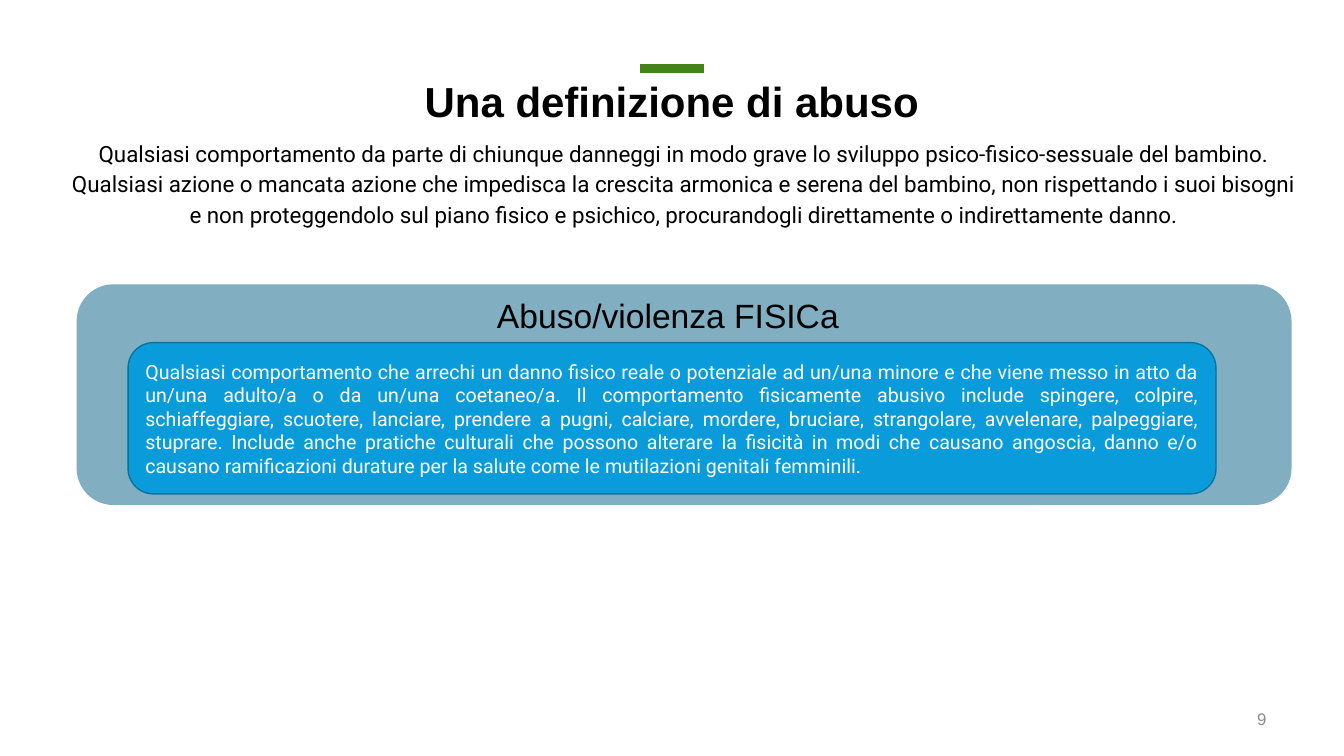
from dataclasses import dataclass, field
from typing import Optional

from lxml.etree import SubElement
from pptx import Presentation
from pptx.dml.color import RGBColor
from pptx.enum.shapes import MSO_CONNECTOR, MSO_SHAPE
from pptx.enum.text import MSO_ANCHOR, MSO_AUTO_SIZE, PP_ALIGN
from pptx.oxml.ns import qn
from pptx.util import Inches, Pt

BLACK = RGBColor(0x00, 0x00, 0x00)
WHITE = RGBColor(0xFF, 0xFF, 0xFF)
GREY = RGBColor(0x8C, 0x8C, 0x8C)
GREEN = RGBColor(0x44, 0x83, 0x19)
TEAL = RGBColor(0x05, 0x5E, 0x83)
BLUE = RGBColor(0x0A, 0x9C, 0xDA)
DARK_BLUE = RGBColor(0x07, 0x73, 0xA1)

Box = tuple[float, float, float, float]


@dataclass
class Label:
    text: str
    box: Box
    size: float
    color: RGBColor = BLACK
    font: str = "Arial"
    bold: bool = False
    align: PP_ALIGN = PP_ALIGN.CENTER
    frame: dict = field(default_factory=dict)
    para: dict = field(default_factory=dict)


@dataclass
class Panel:
    box: Box
    fill: RGBColor
    line: Optional[RGBColor] = None
    alpha: Optional[int] = None
    label: Optional[Label] = None


def set_all(target: object, values: dict) -> None:
    for name, value in values.items():
        setattr(target, name, value)


def write_text(s, label: Label) -> None:
    tf = s.text_frame
    set_all(tf, {"word_wrap": True, **label.frame})
    p = tf.paragraphs[0]
    set_all(p, {"alignment": label.align, **label.para})
    r = p.add_run()
    r.text = label.text
    set_all(r.font, {"name": label.font, "size": Pt(label.size), "bold": label.bold})
    r.font.color.rgb = label.color


def add_label(slide, label: Label) -> None:
    write_text(slide.shapes.add_textbox(*map(Inches, label.box)), label)


def add_panel(slide, panel: Panel) -> None:
    s = slide.shapes.add_shape(MSO_SHAPE.ROUNDED_RECTANGLE, *map(Inches, panel.box))
    s.shadow.inherit = False
    s.fill.solid()
    s.fill.fore_color.rgb = panel.fill
    if panel.alpha is not None:
        color = s.fill._xPr.find(qn("a:solidFill"))[0]
        SubElement(color, qn("a:alpha")).set("val", str(panel.alpha * 1000))
    if panel.line is None:
        s.line.fill.background()
    else:
        s.line.color.rgb = panel.line
        s.line.width = Pt(1)
    if panel.label:
        write_text(s, panel.label)


def add_accent(slide, x1: float, x2: float, y: float) -> None:
    s = slide.shapes.add_connector(MSO_CONNECTOR.STRAIGHT, *map(Inches, (x1, y, x2, y)))
    s.line.color.rgb = GREEN
    s.line.width = Pt(6)
    SubElement(s._element.spPr, qn("a:effectLst"))


GROW = {"auto_size": MSO_AUTO_SIZE.SHAPE_TO_FIT_TEXT}
MIDDLE = {"vertical_anchor": MSO_ANCHOR.MIDDLE}
ABUSE_BOX = (1.27, 3.4, 10.79, 1.5)

TITLE = Label("Una definizione di abuso", (0.68, 0.76, 11.97, 0.63), 30, bold=True,
              para={"line_spacing": 0.9})
DEFINITION = Label(
    "Qualsiasi comportamento da parte di chiunque danneggi in modo grave lo sviluppo "
    "psico-fisico-sessuale del bambino. Qualsiasi azione o mancata azione che impedisca "
    "la crescita armonica e serena del bambino, non rispettando i suoi bisogni e non "
    "proteggendolo sul piano fisico e psichico, procurandogli direttamente o "
    "indirettamente danno.",
    (0.6, 1.23, 12.36, 1.13), 16, font="Roboto",
    frame={"margin_top": Inches(0.12), "margin_bottom": Inches(0.12), **GROW},
    para={"line_spacing": 1.14, "space_after": Pt(5)})
PAGE_NUMBER = Label("9", (11.95, 6.98, 0.71, 0.31), 12, GREY, align=PP_ALIGN.RIGHT,
                    frame=MIDDLE)
ABUSE_HEADING = Label("Abuso/violenza FISICa", (3.91, 2.88, 5.43, 0.5), 24, frame=GROW)
ABUSE_TEXT = Label(
    "Qualsiasi comportamento che arrechi un danno fisico reale o potenziale ad un/una "
    "minore e che viene messo in atto da un/una adulto/a o da un/una coetaneo/a. Il "
    "comportamento fisicamente abusivo include spingere, colpire, schiaffeggiare, "
    "scuotere, lanciare, prendere a pugni, calciare, mordere, bruciare, strangolare, "
    "avvelenare, palpeggiare, stuprare. Include anche pratiche culturali che possono "
    "alterare la fisicità in modi che causano angoscia, danno e/o causano ramificazioni "
    "durature per la salute come le mutilazioni genitali femminili.",
    ABUSE_BOX, 14, WHITE, "Roboto", align=PP_ALIGN.JUSTIFY, frame=MIDDLE)
PANELS = [
    Panel((0.76, 2.82, 12.05, 2.19), TEAL, alpha=50),
    Panel(ABUSE_BOX, BLUE, line=DARK_BLUE, label=ABUSE_TEXT),
]


def main() -> None:
    prs = Presentation()
    prs.slide_width, prs.slide_height = Inches(13.33), Inches(7.5)
    slide = prs.slides.add_slide(prs.slide_layouts[6])

    # Accent bar above the title
    add_accent(slide, 6.35, 6.98, 0.68)
    # Nested panels, outer first
    for panel in PANELS:
        add_panel(slide, panel)
    # Free-standing text
    for label in (TITLE, DEFINITION, ABUSE_HEADING, PAGE_NUMBER):
        add_label(slide, label)

    prs.save("out.pptx")


if __name__ == "__main__":
    main()
